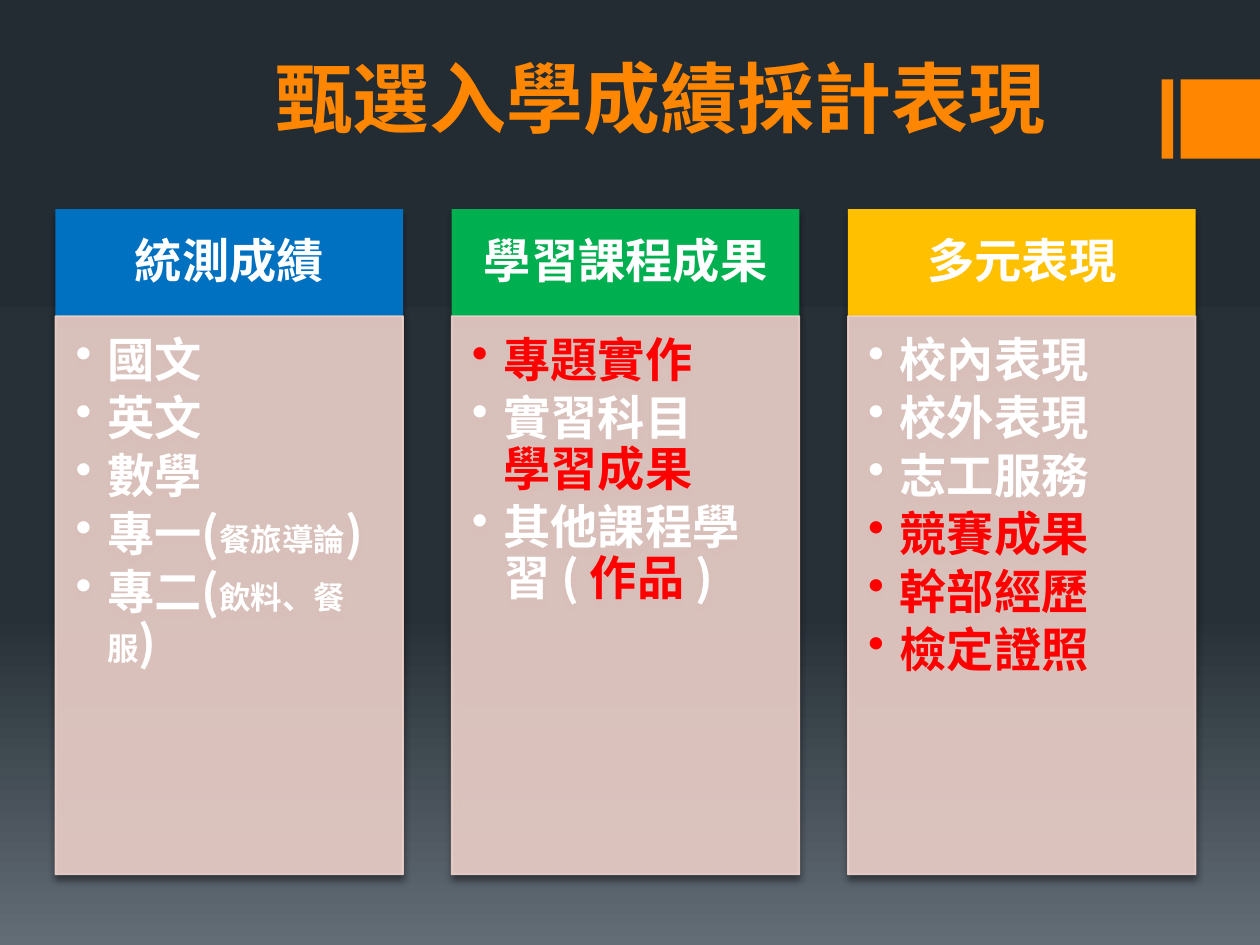
import pptx
import pptx.dml.color
import pptx.enum.shapes
import pptx.enum.text
import pptx.oxml
import pptx.oxml.ns
import pptx.util
from lxml import etree

Inches = pptx.util.Inches
Pt = pptx.util.Pt
ALIGN = pptx.enum.text.PP_ALIGN
ANCHOR = pptx.enum.text.MSO_ANCHOR
NAMESPACE = pptx.oxml.ns.nsdecls("a")

WHITE, RED, ORANGE, ROSE = "FFFFFF", "FF0000", "FF8600", "EED2CC"
SMALL = 18
BREAK = "\n"

# Each list item is a sequence of (text, colour, size) runs or BREAK.
COLUMNS = [
    ("統測成績", "0070C0", [
        [("國文", WHITE)],
        [("英文", WHITE)],
        [("數學", WHITE)],
        [("專一(", WHITE), ("餐旅導論", WHITE, SMALL), (")", WHITE)],
        [("專二(", WHITE), ("飲料、餐服", WHITE, SMALL), (")", WHITE)],
    ]),
    ("學習課程成果", "00B050", [
        [("專題實作", RED)],
        [("實習科目", WHITE), BREAK, ("學習成果", RED)],
        [("其他課程學習 ( ", WHITE), ("作品 ", RED), (")", WHITE)],
    ]),
    ("多元表現", "FFC000", [
        [("校內表現", WHITE)],
        [("校外表現", WHITE)],
        [("志工服務", WHITE)],
        [("競賽成果", RED)],
        [("幹部經歷", RED)],
        [("檢定證照", RED)],
    ]),
]


def color(hex_string):
    return pptx.dml.color.RGBColor.from_string(hex_string)


def add_alpha(fill_parent, percent):
    """Make the solid colour under this element partly transparent."""
    for rgb in fill_parent.findall("a:solidFill/a:srgbClr", pptx.oxml.ns._nsmap):
        alpha = etree.SubElement(rgb, pptx.oxml.ns.qn("a:alpha"))
        alpha.set("val", str(percent * 1000))


class SlideBuilder:
    font_name = "Noto Sans CJK SC"
    text_size = 27

    def __init__(self, slide):
        self.slide = slide

    def background(self, stops):
        """Fill the background from top to bottom with (percent, colour) stops."""
        fill = self.slide.background.fill
        fill.gradient()
        fill.gradient_angle = 270
        stop_list = fill.gradient_stops[0]._gs.getparent()
        for stop in list(stop_list):
            stop_list.remove(stop)
        for percent, hex_string in stops:
            stop_list.append(pptx.oxml.parse_xml(
                f'<a:gs {NAMESPACE} pos="{percent * 1000}">'
                f'<a:srgbClr val="{hex_string}"/></a:gs>'))

    def run(self, paragraph, text, hex_string, size=text_size):
        run = paragraph.add_run()
        run.text = text
        run.font.name = self.font_name
        run.font.size = Pt(size)
        run.font.bold = True
        run.font.color.rgb = color(hex_string)
        east_asian = etree.SubElement(run.font._element, pptx.oxml.ns.qn("a:ea"))
        east_asian.set("typeface", self.font_name)

    def title(self, text, left, top, width, height):
        title = self.slide.shapes.title
        title.left, title.top = Inches(left), Inches(top)
        title.width, title.height = Inches(width), Inches(height)
        title.text_frame.vertical_anchor = ANCHOR.MIDDLE
        paragraph = title.text_frame.paragraphs[0]
        paragraph.alignment = ALIGN.LEFT
        self.run(paragraph, text, ORANGE, 44)

    def box(self, left, top, width, height, fill):
        shape = self.slide.shapes.add_shape(
            pptx.enum.shapes.MSO_SHAPE.RECTANGLE,
            Inches(left), Inches(top), Inches(width), Inches(height))
        shape.shadow.inherit = False
        shape.fill.solid()
        shape.fill.fore_color.rgb = color(fill)
        shape.line.fill.background()
        return shape

    def card(self, left, top, width, height, fill, insets, anchor):
        """Add a box with a soft shadow and room for text."""
        shape = self.box(left, top, width, height, fill)
        effects = shape._element.spPr.find(pptx.oxml.ns.qn("a:effectLst"))
        effects.append(pptx.oxml.parse_xml(
            f'<a:outerShdw {NAMESPACE} blurRad="{Pt(3.8)}" dist="{Pt(3)}" '
            'dir="5400000" rotWithShape="0"><a:srgbClr val="000000">'
            '<a:alpha val="48000"/></a:srgbClr></a:outerShdw>'))
        frame = shape.text_frame
        frame.word_wrap = True
        frame.vertical_anchor = anchor
        (frame.margin_left, frame.margin_top,
         frame.margin_right, frame.margin_bottom) = map(Inches, insets)
        return shape

    def heading(self, text, left, top, width, height, fill):
        shape = self.card(left, top, width, height, fill,
                          (0.21, 0.12, 0.21, 0.12), ANCHOR.MIDDLE)
        paragraph = shape.text_frame.paragraphs[0]
        paragraph.alignment = ALIGN.CENTER
        paragraph.line_spacing = 0.9
        self.run(paragraph, text, WHITE)

    def bullet_list(self, items, left, top, width, height):
        shape = self.card(left, top, width, height, ROSE,
                          (0.16, 0.16, 0.21, 0.24), ANCHOR.TOP)
        shape.line.color.rgb = color(ROSE)
        shape.line.width = Pt(1)
        add_alpha(shape._element.spPr, 90)
        add_alpha(shape.line._ln, 90)
        frame = shape.text_frame
        for index, item in enumerate(items):
            paragraph = frame.add_paragraph() if index else frame.paragraphs[0]
            paragraph.alignment = ALIGN.LEFT
            paragraph.line_spacing = 0.9
            paragraph.space_after = Pt(4)
            properties = paragraph._p.get_or_add_pPr()
            properties.set("marL", str(Inches(0.25)))
            properties.set("indent", str(-Inches(0.25)))
            bullet = etree.SubElement(properties, pptx.oxml.ns.qn("a:buChar"))
            bullet.set("char", "•")
            for part in item:
                if part == BREAK:
                    paragraph.add_line_break()
                else:
                    self.run(paragraph, *part)


def main():
    presentation = pptx.Presentation()
    presentation.slide_width, presentation.slide_height = Inches(10), Inches(7.5)
    title_only = presentation.slide_layouts[5]
    builder = SlideBuilder(presentation.slides.add_slide(title_only))

    builder.background([(0, "242C33"), (65, "273037"), (100, "636D76")])
    for left, width in ((9.22, 0.09), (9.37, 0.63)):
        builder.box(left, 0.63, width, 0.63, ORANGE)
    builder.title("甄選入學成績採計表現", 2.09, 0.38, 7.4, 0.78)

    first_left, pitch, width = 0.44, 3.145, 2.76
    top, heading_height, list_height = 1.66, 0.85, 4.43
    for index, (heading, fill, items) in enumerate(COLUMNS):
        left = first_left + index * pitch
        builder.heading(heading, left, top, width, heading_height, fill)
        builder.bullet_list(items, left, top + heading_height, width, list_height)

    presentation.save("out.pptx")


if __name__ == "__main__":
    main()
